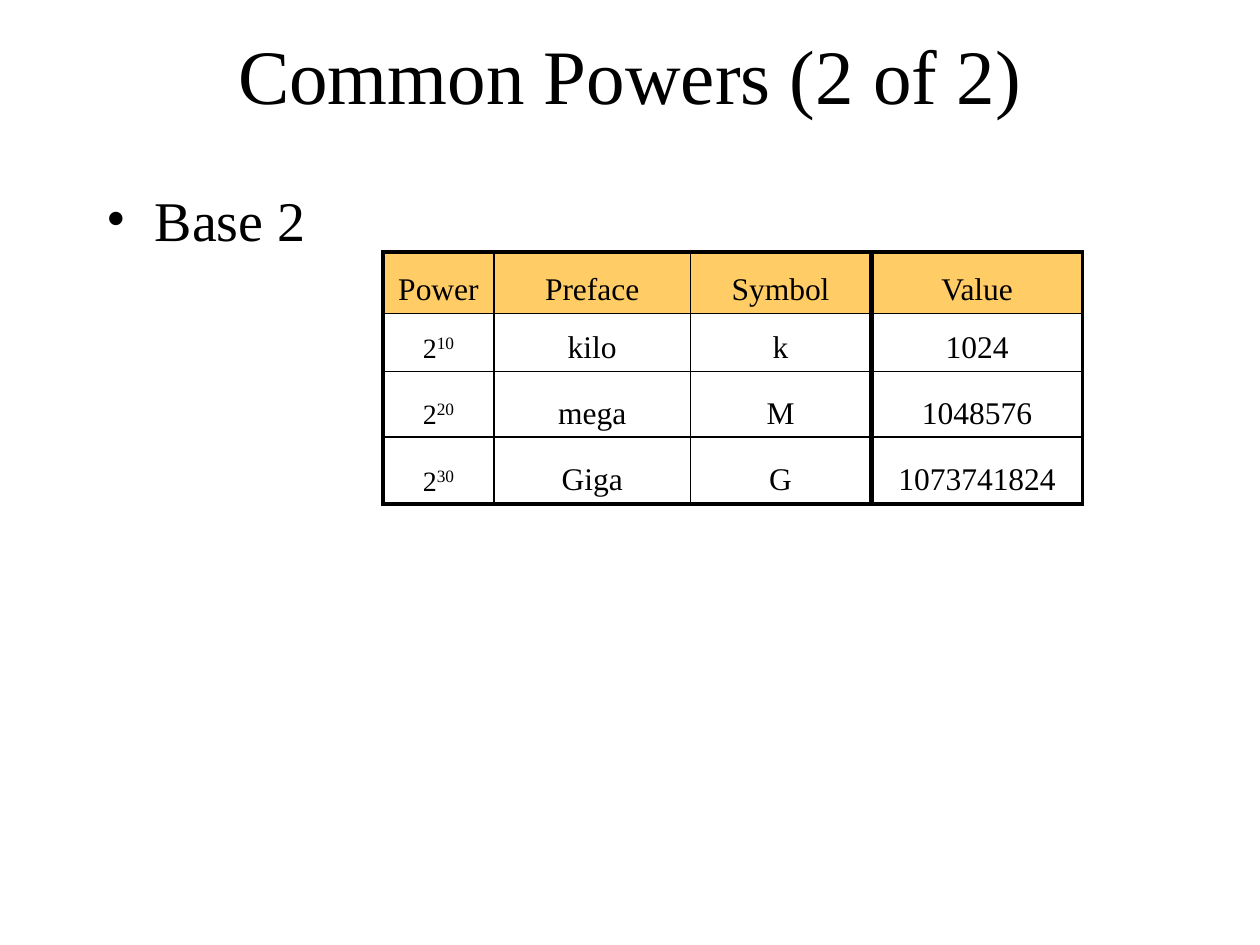
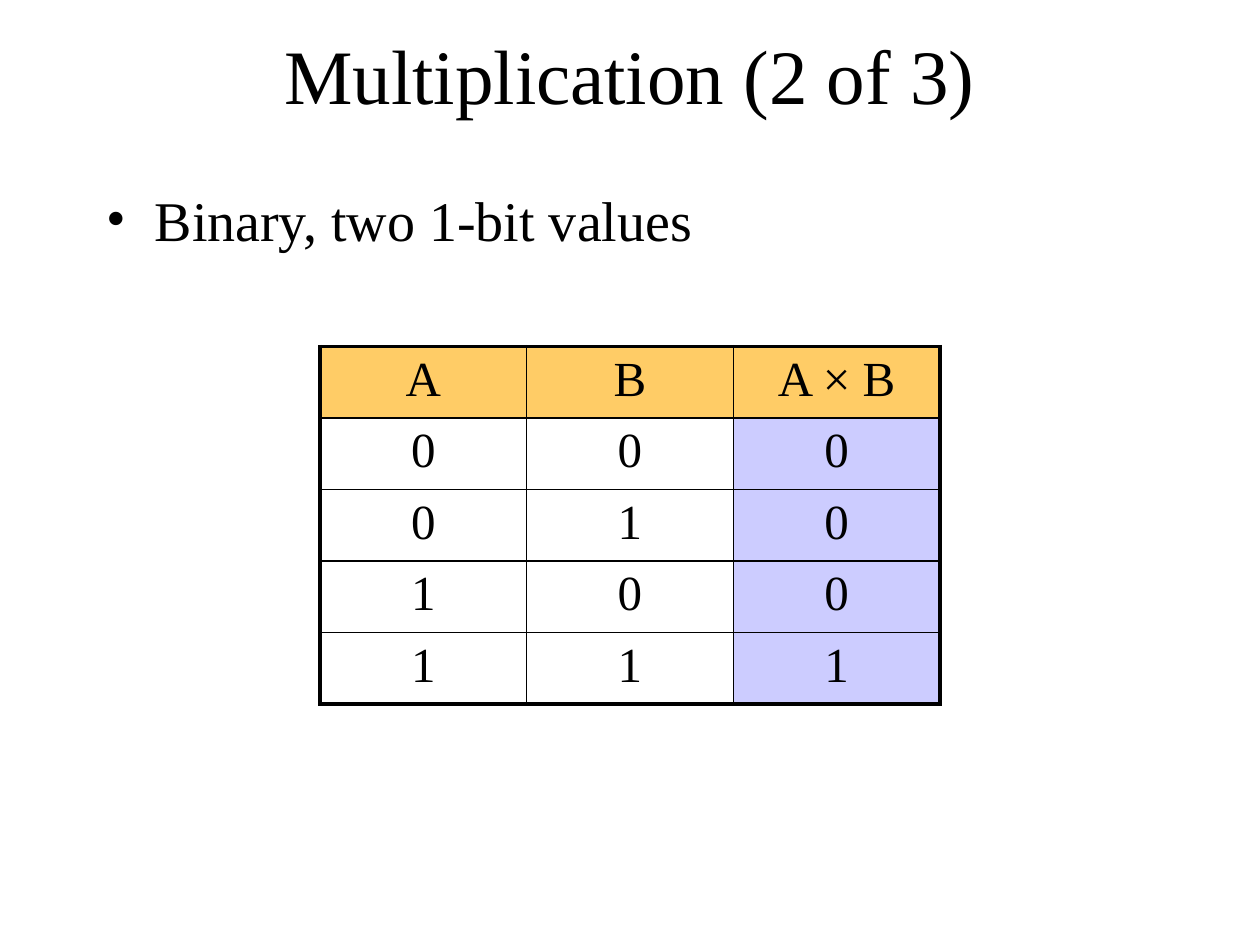
from lxml.etree import SubElement
from pptx import Presentation
from pptx.dml.color import RGBColor
from pptx.enum.text import MSO_ANCHOR as ANCHOR, PP_ALIGN as ALIGN
from pptx.oxml.ns import qn
from pptx.util import Inches, Pt

FONT = "Times New Roman"
BLACK, GOLD, LILAC = "000000", "FFCC66", "CCCCFF"
THIN, THICK = 1, 2.25
rgb = RGBColor.from_string


def write(tf, text, size, power=None, align=ALIGN.CENTER, bullet=False):
    """Write one line of text, with an optional raised power after it."""
    p = tf.paragraphs[0]
    p.alignment = align
    if bullet:
        pPr = p._p.get_or_add_pPr()
        pPr.set("marL", str(Inches(0.38)))
        pPr.set("indent", str(Inches(-0.38)))
        SubElement(pPr, qn("a:buFont"), typeface=FONT)
        SubElement(pPr, qn("a:buChar"), char="•")
    for part, part_size in ((text, size), (power, 17)):
        if part is None:
            continue
        r = p.add_run()
        r.text = part
        r.font.name, r.font.size, r.font.bold = FONT, Pt(part_size), False
        r.font.color.rgb = rgb(BLACK)
        if part is power:
            r._r.get_or_add_rPr().set("baseline", "30000")


def add_grid(s, left, top, widths, heights, rows, size, anchor, last_fill=None):
    """Add a table with a gold header, a thick frame and thin inner lines."""
    n_rows, n_cols = len(heights), len(widths)
    frame = s.shapes.add_table(n_rows, n_cols, Inches(left), Inches(top),
                               Inches(sum(widths)), Inches(sum(heights)))
    table = frame.table
    table.first_row = table.horz_banding = False
    for col, width in zip(table.columns, widths):
        col.width = Inches(width)
    for row, height in zip(table.rows, heights):
        row.height = Inches(height)
    for i, values in enumerate(rows):
        for j, value in enumerate(values):
            cell = table.cell(i, j)
            cell.vertical_anchor = anchor
            if isinstance(value, tuple):
                write(cell.text_frame, value[0], 16, power=value[1])
            else:
                write(cell.text_frame, value, size)
            # Borders go before the fill in the cell properties
            outer = {"lnL": j == 0, "lnR": j == n_cols - 1,
                     "lnT": i == 0, "lnB": i == n_rows - 1}
            for side, is_outer in outer.items():
                ln = SubElement(cell._tc.get_or_add_tcPr(), qn("a:" + side),
                                w=str(Pt(THICK if is_outer else THIN)))
                SubElement(SubElement(ln, qn("a:solidFill")), qn("a:srgbClr"), val=BLACK)
            fill = GOLD if i == 0 else last_fill if j == n_cols - 1 else None
            if fill:
                cell.fill.solid()
                cell.fill.fore_color.rgb = rgb(fill)
            else:
                cell.fill.background()


prs = Presentation()
prs.slide_width, prs.slide_height = Inches(10), Inches(7.5)

# Title and bullet of each slide
slides = []
for title, point in (("Common Powers (2 of 2)", "Base 2"),
                     ("Multiplication (2 of 3)", "Binary, two 1-bit values")):
    s = prs.slides.add_slide(prs.slide_layouts[6])
    slides.append(s)
    for text, top, height, anchor, fmt in (
            (title, 0.17, 0.83, ANCHOR.MIDDLE, {"size": 44}),
            (point, 1.42, 4.5, ANCHOR.TOP,
             {"size": 32, "align": ALIGN.LEFT, "bullet": True})):
        sp = s.shapes.add_textbox(Inches(0.75), Inches(top), Inches(8.5), Inches(height))
        tf = sp.text_frame
        tf.word_wrap = True
        tf.vertical_anchor = anchor
        write(tf, text, **fmt)
powers_slide, product_slide = slides

# Powers of two, with the values in a table of their own
heights = [0.49, 0.46, 0.52, 0.53]
prefixes = [("Power", "Preface", "Symbol"),
            (("2", "10"), "kilo", "k"),
            (("2", "20"), "mega", "M"),
            (("2", "30"), "Giga", "G")]
values = [("Value",), ("1024",), ("1048576",), ("1073741824",)]
add_grid(powers_slide, 3.04, 2, [0.88, 1.56, 1.43], heights, prefixes, 18, ANCHOR.BOTTOM)
add_grid(powers_slide, 6.92, 2, [1.67], heights, values, 18, ANCHOR.BOTTOM)

# Truth table of the one-bit product
products = [("A", "B", "A × B")]
products += [(str(a), str(b), str(a * b)) for a in (0, 1) for b in (0, 1)]
add_grid(product_slide, 2.54, 2.75, [1.64] * 3, [0.53] * 5, products, 28,
         ANCHOR.TOP, last_fill=LILAC)

prs.save("out.pptx")
